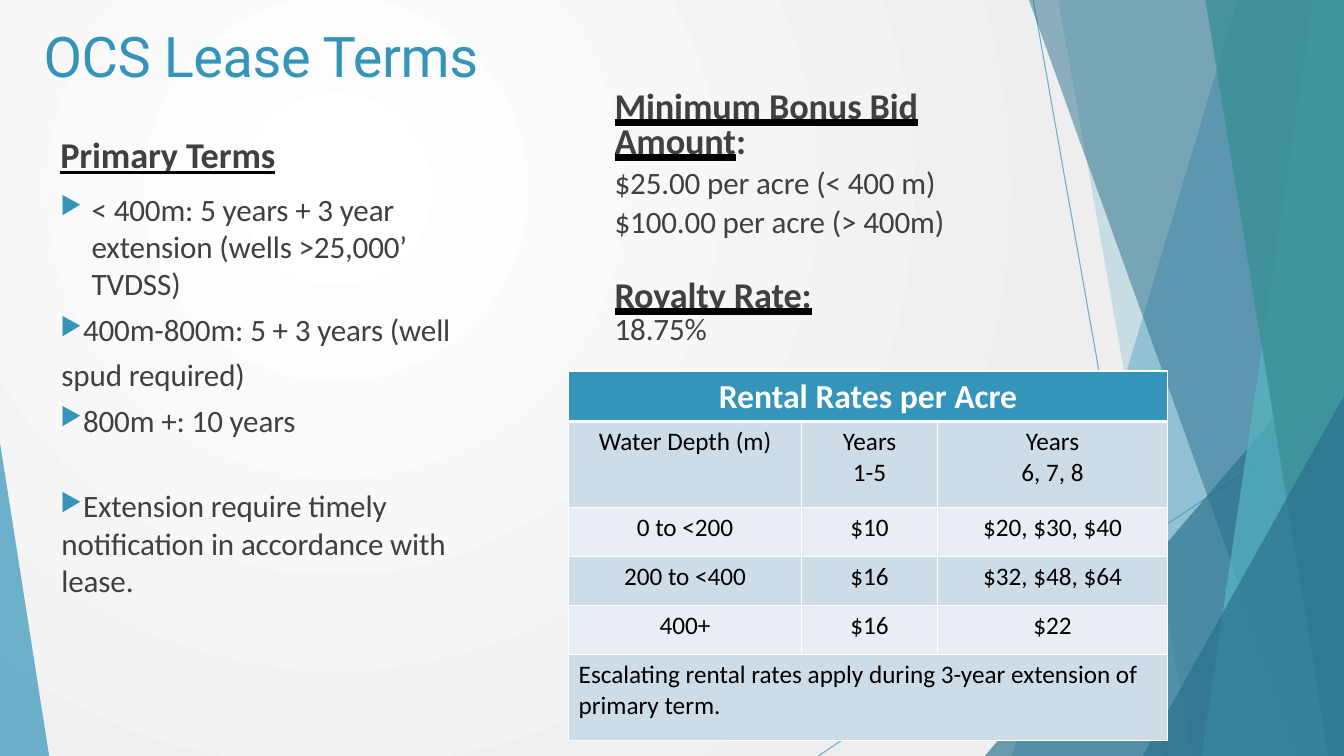
from dataclasses import dataclass, field

import pptx
import pptx.dml.color
import pptx.enum.dml
import pptx.enum.shapes
import pptx.enum.text
import pptx.oxml
import pptx.oxml.ns
import pptx.util
from lxml import etree

Cm, Pt = pptx.util.Cm, pptx.util.Pt
RGBColor = pptx.dml.color.RGBColor
qn = pptx.oxml.ns.qn
ALIGN = pptx.enum.text.PP_ALIGN
UNDERLINE = pptx.enum.text.MSO_UNDERLINE

BLUE = RGBColor(0x34, 0x94, 0xBA)
DARK_BLUE = RGBColor(0x27, 0x6F, 0x8B)
TEAL = RGBColor(0x58, 0xB6, 0xC0)
DARK_TEAL = RGBColor(0x3A, 0x8F, 0x98)
GREY = RGBColor(0x40, 0x40, 0x40)
BLACK = RGBColor(0, 0, 0)
WHITE = RGBColor(0xFF, 0xFF, 0xFF)
PALE = RGBColor(0xEE, 0xEE, 0xEE)
BAND_DARK = RGBColor(0xCE, 0xDC, 0xE7)
BAND_LIGHT = RGBColor(0xE8, 0xEE, 0xF3)

WIDTH, HEIGHT = 33.87, 19.05


@dataclass
class Facet:
    """A pane from a slanted left edge to the right side of the slide."""
    top_x: float
    bottom_x: float
    color: RGBColor
    alpha: int


@dataclass
class Triangle:
    """A right triangle standing on the bottom of the slide."""
    left: float
    top: float
    width: float
    apex: float
    color: RGBColor
    alpha: int


@dataclass
class Para:
    runs: list[tuple[str, dict]]
    format: dict = field(default_factory=dict)
    bullet_margin: float | None = None


HEADING = {"size": Pt(25.9), "name": "Calibri", "bold": True, "underline": True}
HEAVY = HEADING | {"underline": UNDERLINE.HEAVY_LINE}
NO_LINE = HEADING | {"underline": False}
BODY = {"size": Pt(22.2), "name": "Calibri", "bold": False}
TITLE = {"size": Pt(40), "name": "Roboto"}

PANES = [
    Facet(31.19, 25.5, BLUE, 36),
    Facet(26.67, 30.05, BLUE, 20),
    Triangle(24.82, 8.46, 9.05, 1, DARK_BLUE, 66),
    Facet(25.93, 32.79, DARK_BLUE, 50),
    Facet(33.1, 30.28, TEAL, 70),
    Facet(30.38, 33.48, DARK_TEAL, 80),
    Triangle(28.8, 9.98, 5.07, 1, DARK_BLUE, 66),
    Triangle(0, 11.15, 1.24, 0, BLUE, 70),
]
LINES = [(26.04, 0, 29.41, HEIGHT), (WIDTH, 10.24, 20.62, HEIGHT)]

TIGHT = {"line_spacing": 0.8}
LOOSE = {"line_spacing": 1.2, "space_before": Pt(0.9)}
PRIMARY_TERMS = [
    Para([("Primary Terms", HEADING)], TIGHT),
    Para([("< 400m: 5 years + 3 year extension (wells >25,000’ TVDSS)", BODY)],
         {"space_before": Pt(10.1)}, 0.79),
    Para([("400m-800m: 5 + 3 years (well spud required)", BODY)], LOOSE, 0.03),
    Para([("800m +: 10 years", BODY)], LOOSE, 0.03),
    Para([("Extension require timely notification in accordance with lease.", BODY)],
         {"space_before": Pt(34.3)}, 0.03),
]
BID_AND_ROYALTY = [
    Para([("Minimum Bonus Bid Amount", HEAVY), (":", NO_LINE)], TIGHT),
    Para([("$25.00 per acre (< 400 m)", BODY)], TIGHT | {"space_before": Pt(6.6)}),
    Para([("$100.00 per acre (> 400m)", BODY)], TIGHT | {"space_before": Pt(6.7)}),
    Para([("Royalty Rate:", HEAVY)], TIGHT | {"space_before": Pt(29.3)}),
    Para([("18.75%", BODY)], TIGHT | {"space_before": Pt(1)}),
]

COLUMNS = [5.87, 3.43, 5.79]
ROW, TALL_ROW = 1.24, 2.16
RENTAL_ROWS = [
    (ROW, BLUE, ["Rental Rates per Acre"]),
    (TALL_ROW, BAND_DARK, ["Water Depth (m)", "Years\n1-5", "Years\n6, 7, 8"]),
    (ROW, BAND_LIGHT, ["0 to <200", "$10", "$20, $30, $40"]),
    (ROW, BAND_DARK, ["200 to <400", "$16", "$32, $48, $64"]),
    (ROW, BAND_LIGHT, ["400+", "$16", "$22"]),
    (TALL_ROW, BAND_DARK,
     ["Escalating rental rates apply during 3-year extension of primary term."]),
]


def apply(target, values: dict) -> None:
    for name, value in values.items():
        setattr(target, name, value)


def solid(color: RGBColor):
    fill = etree.Element(qn("a:solidFill"))
    etree.SubElement(fill, qn("a:srgbClr"), val=str(color))
    return fill


def set_alpha(element, percent: int) -> None:
    clr = next(element.iter(qn("a:srgbClr")))
    etree.SubElement(clr, qn("a:alpha"), val=str(percent * 1000))


def paint_background(s) -> None:
    fill = s.background.fill
    fill.gradient()
    for stop, color in zip(fill.gradient_stops, (WHITE, PALE)):
        stop.color.rgb = color
    lin = next(s.element.iter(qn("a:lin")))
    circle = etree.Element(qn("a:path"), path="circle")
    etree.SubElement(circle, qn("a:fillToRect"), l="50000", t="50000", r="100000", b="100000")
    lin.getparent().replace(lin, circle)


def add_line(s, x1: float, y1: float, x2: float, y2: float) -> None:
    line = s.shapes.add_connector(pptx.enum.shapes.MSO_CONNECTOR.STRAIGHT,
                                  Cm(x1), Cm(y1), Cm(x2), Cm(y2))
    line.line.color.rgb, line.line.width = BLUE, Pt(0.75)
    sp_pr = line.element.spPr
    set_alpha(sp_pr, 70)
    etree.SubElement(sp_pr, qn("a:effectLst"))


def add_pane(s, pane: Facet | Triangle) -> None:
    if isinstance(pane, Facet):
        builder = s.shapes.build_freeform(Cm(pane.top_x), 0)
        builder.add_line_segments([(Cm(WIDTH), 0), (Cm(WIDTH), Cm(HEIGHT)),
                                   (Cm(pane.bottom_x), Cm(HEIGHT))])
        sp = builder.convert_to_shape()
    else:
        sp = s.shapes.add_shape(pptx.enum.shapes.MSO_SHAPE.ISOSCELES_TRIANGLE,
                                Cm(pane.left), Cm(pane.top),
                                Cm(pane.width), Cm(HEIGHT - pane.top))
        sp.adjustments[0] = pane.apex
    sp.shadow.inherit = False
    sp.fill.solid()
    sp.fill.fore_color.rgb = pane.color
    set_alpha(sp.element.spPr, pane.alpha)
    sp.line.fill.background()


def add_bullet(p, margin: float) -> None:
    p_pr = p._p.get_or_add_pPr()
    p_pr.set("marL", str(Cm(margin)))
    p_pr.set("indent", str(-Cm(0.97)))
    color = etree.SubElement(p_pr, qn("a:buClr"))
    etree.SubElement(color, qn("a:srgbClr"), val=str(BLUE))
    etree.SubElement(p_pr, qn("a:buSzPct"), val="79000")
    etree.SubElement(p_pr, qn("a:buChar"), char="▶")


def add_text(s, box: tuple, paras: list[Para], color: RGBColor, spacing: int = -10):
    """Add a text box; spacing is the letter spacing in hundredths of a point."""
    tf = s.shapes.add_textbox(*map(Cm, box)).text_frame
    tf.word_wrap = True
    for i, para in enumerate(paras):
        p = tf.add_paragraph() if i else tf.paragraphs[0]
        if para.bullet_margin is not None:
            add_bullet(p, para.bullet_margin)
        apply(p, para.format)
        for text, style in para.runs:
            r = p.add_run()
            r.text = text
            apply(r.font, style)
            r.font.color.rgb = color
            r_pr = r._r.get_or_add_rPr()
            r_pr.set("spc", str(spacing))
            if style.get("underline"):
                line_fill = etree.Element(qn("a:uFill"))
                line_fill.append(solid(BLACK))
                r_pr.find(qn("a:solidFill")).addnext(line_fill)
    return tf


def set_borders(cell, row: int) -> None:
    widths = {"L": 1, "R": 1, "T": 3 if row == 1 else 1, "B": 3 if row == 0 else 1}
    tc_pr = cell._tc.get_or_add_tcPr()
    for i, (side, width) in enumerate(widths.items()):
        ln = etree.Element(qn(f"a:ln{side}"), w=str(Pt(width)))
        ln.append(solid(WHITE))
        tc_pr.insert(i, ln)


def add_rental_table(s) -> None:
    heights = [height for height, _, _ in RENTAL_ROWS]
    table = s.shapes.add_table(len(heights), len(COLUMNS), Cm(14.33), Cm(9.35),
                               Cm(sum(COLUMNS)), Cm(sum(heights))).table
    table.first_row = table.horz_banding = False
    for column, width in zip(table.columns, COLUMNS):
        column.width = Cm(width)
    last = len(heights) - 1
    for i, (height, color, texts) in enumerate(RENTAL_ROWS):
        table.rows[i].height = Cm(height)
        for j in range(len(COLUMNS)):
            cell = table.cell(i, j)
            cell.fill.solid()
            cell.fill.fore_color.rgb = color
            set_borders(cell, i)
        if len(texts) == 1:
            table.cell(i, 0).merge(table.cell(i, len(COLUMNS) - 1))
        for j, text in enumerate(texts):
            tf = table.cell(i, j).text_frame
            tf.text = text
            for p in tf.paragraphs:
                p.alignment = ALIGN.LEFT if i == last else ALIGN.CENTER
                apply(p.runs[0].font, {"name": "Calibri", "bold": i == 0,
                                       "size": Pt(18 if i else 24)})
                p.runs[0].font.color.rgb = BLACK if i else WHITE


def main() -> None:
    prs = pptx.Presentation()
    prs.slide_width, prs.slide_height = Cm(WIDTH), Cm(HEIGHT)
    s = prs.slides.add_slide(prs.slide_layouts[6])
    paint_background(s)
    for ends in LINES:
        add_line(s, *ends)
    for pane in PANES:
        add_pane(s, pane)
    title = add_text(s, (1.07, 0.51, 17.7, 1.75), [Para([("OCS Lease Terms", TITLE)])], BLUE, -30)
    apply(title, {"margin_left": Cm(0.03), "margin_right": 0, "margin_top": Cm(0.03),
                  "margin_bottom": 0, "vertical_anchor": pptx.enum.text.MSO_ANCHOR.MIDDLE})
    add_text(s, (1.27, 3.43, 10.87, 13.77), PRIMARY_TERMS, GREY)
    add_text(s, (15.24, 2.18, 10.85, 6.93), BID_AND_ROYALTY, GREY)
    add_rental_table(s)
    prs.save("out.pptx")


if __name__ == "__main__":
    main()
